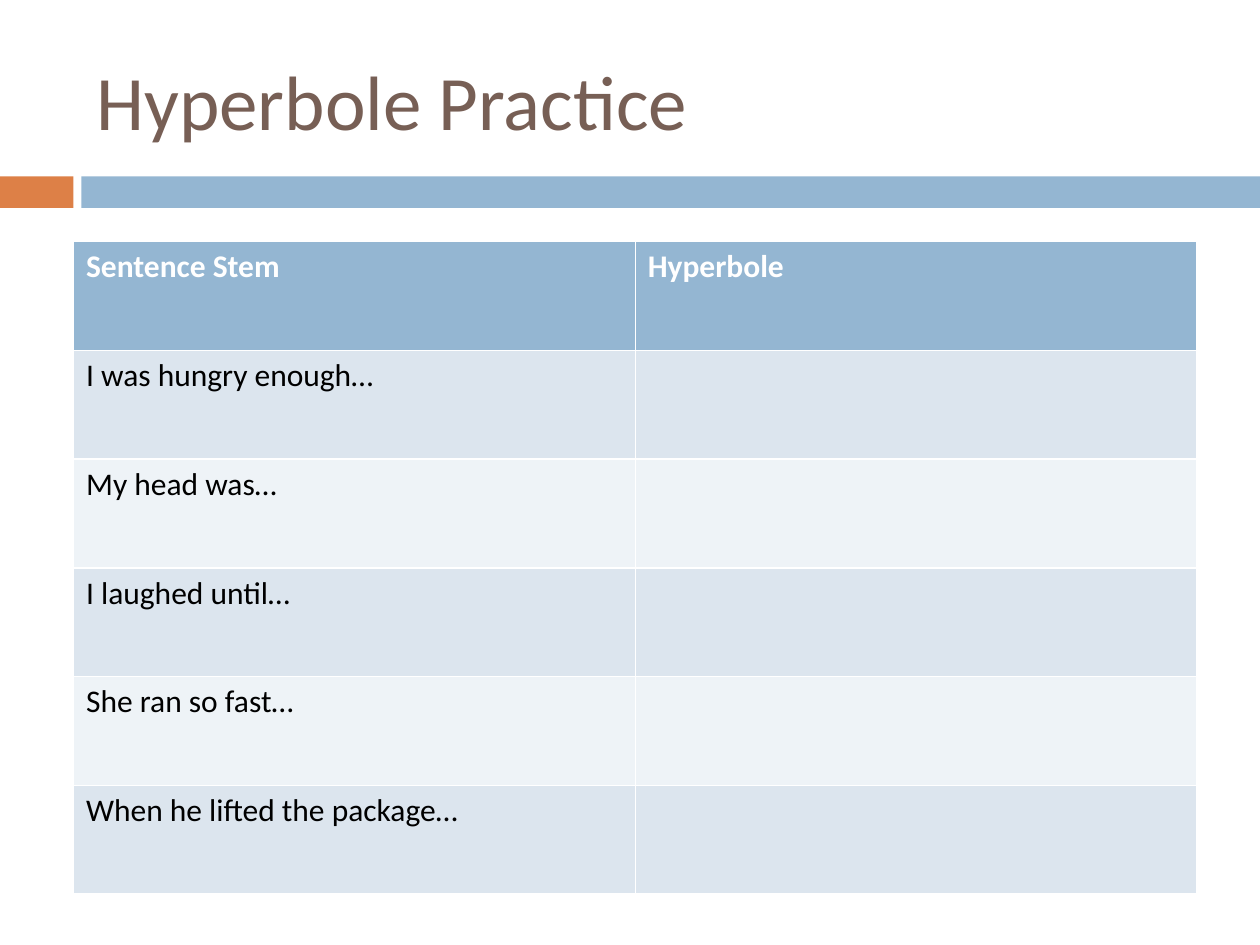
from dataclasses import dataclass

from pptx import Presentation
from pptx.dml.color import RGBColor
from pptx.enum import shapes, text
from pptx.util import Pt


@dataclass(frozen=True)
class Theme:
    font: str = "Calibri"
    title_size: int = 44
    table_size: int = 18
    title: str = "775F55"
    accent: str = "DD8047"
    header: str = "94B6D2"
    header_text: str = "FFFFFF"
    body_text: str = "000000"
    bands: tuple = ("DCE5EE", "EEF3F7")


THEME = Theme()

HEADINGS = ("Sentence Stem", "Hyperbole")
STEMS = (
    "I was hungry enough…",
    "My head was…",
    "I laughed until…",
    "She ran so fast…",
    "When he lifted the package…",
)


def fill_with(target, color):
    target.fill.solid()
    target.fill.fore_color.rgb = RGBColor.from_string(color)


def add_run(paragraph, words, size, color, bold=False):
    run = paragraph.add_run()
    run.text = words
    run.font.name = THEME.font
    run.font.size = Pt(size)
    run.font.bold = bold
    run.font.color.rgb = RGBColor.from_string(color)


def add_bar(slide, left, width, color):
    """Add one piece of the band under the title."""
    bar = slide.shapes.add_shape(
        shapes.MSO_SHAPE.RECTANGLE, Pt(left), Pt(100.8), Pt(width), Pt(18)
    )
    bar.shadow.inherit = False
    fill_with(bar, color)
    bar.line.fill.background()


def add_title(slide, words):
    box = slide.shapes.add_textbox(Pt(48), Pt(18), Pt(642), Pt(78))
    frame = box.text_frame
    frame.word_wrap = True
    frame.vertical_anchor = text.MSO_ANCHOR.MIDDLE
    add_run(frame.paragraphs[0], words, THEME.title_size, THEME.title)


def add_practice_table(slide, headings, stems):
    """Add a table with the stems at left and an empty answer column at right."""
    rows = [headings] + [(stem, "") for stem in stems]
    frame = slide.shapes.add_table(
        len(rows), len(headings), Pt(42), Pt(138), Pt(642), Pt(373)
    )
    # The default table style supplies the white rules between cells.
    for row_index, row in enumerate(rows):
        is_header = row_index == 0
        fill = THEME.header if is_header else THEME.bands[(row_index - 1) % 2]
        color = THEME.header_text if is_header else THEME.body_text
        for column_index, words in enumerate(row):
            cell = frame.table.cell(row_index, column_index)
            fill_with(cell, fill)
            if words:
                paragraph = cell.text_frame.paragraphs[0]
                add_run(paragraph, words, THEME.table_size, color, is_header)


def main():
    presentation = Presentation()
    presentation.slide_width = Pt(720)
    presentation.slide_height = Pt(540)
    slide = presentation.slides.add_slide(presentation.slide_layouts[6])

    add_bar(slide, 0, 42, THEME.accent)
    add_bar(slide, 46.5, 673.5, THEME.header)
    add_title(slide, "Hyperbole Practice")
    add_practice_table(slide, HEADINGS, STEMS)

    presentation.save("out.pptx")


if __name__ == "__main__":
    main()
